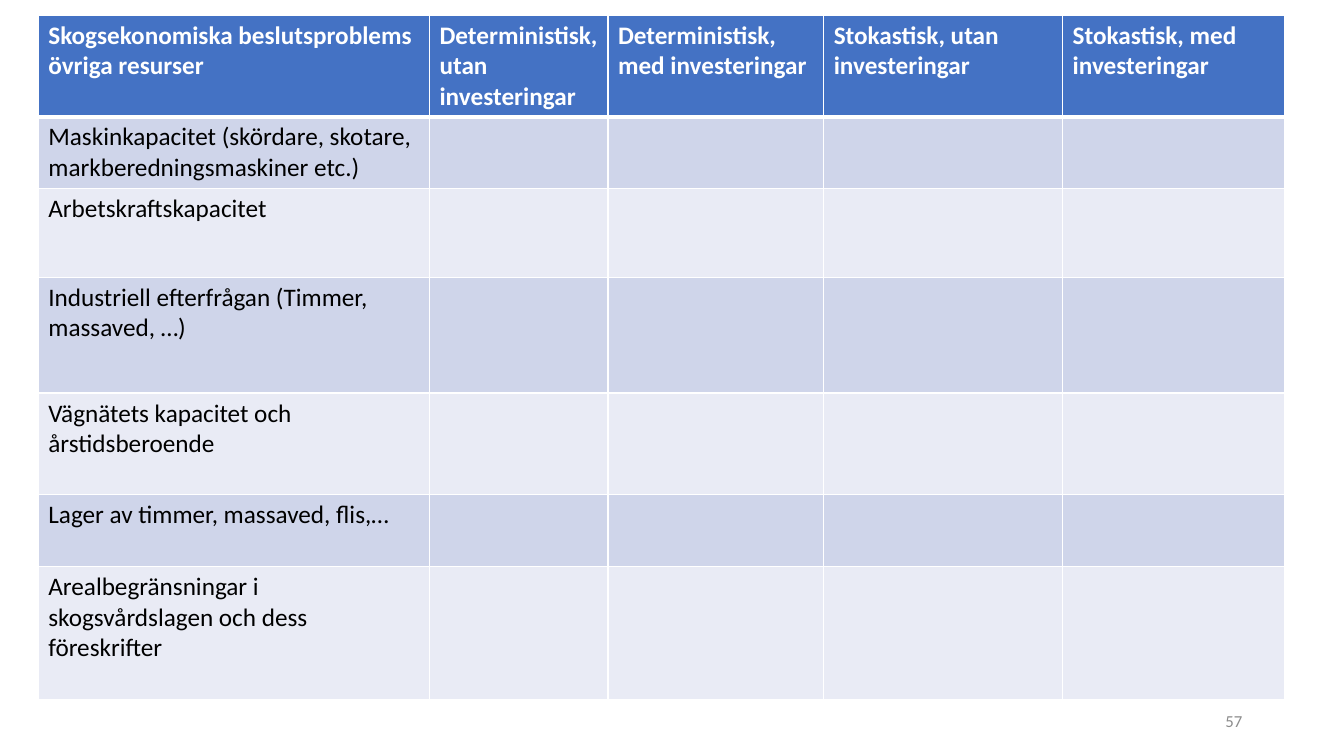
from lxml import etree
from pptx import Presentation
from pptx.dml.color import RGBColor
from pptx.enum.text import MSO_ANCHOR, PP_ALIGN
from pptx.oxml.ns import qn
from pptx.util import Pt

PX = 9144
SLIDE_WIDTH, SLIDE_HEIGHT = 1333, 750
BLANK_LAYOUT = 6
FONT = "Calibri"
MIDDLE = MSO_ANCHOR.MIDDLE
RIGHT = PP_ALIGN.RIGHT

WHITE = RGBColor(0xFF, 0xFF, 0xFF)
BLACK = RGBColor(0x00, 0x00, 0x00)
GREY = RGBColor(0x8C, 0x8C, 0x8C)
HEADER_BLUE = RGBColor(0x44, 0x72, 0xC4)
BANDS = (RGBColor(0xE9, 0xEB, 0xF5), RGBColor(0xCF, 0xD5, 0xEA))

HEADINGS = (
    "Skogsekonomiska beslutsproblems övriga resurser",
    "Deterministisk, utan investeringar",
    "Deterministisk, med investeringar",
    "Stokastisk, utan investeringar",
    "Stokastisk, med investeringar",
)
RESOURCES = (
    "Maskinkapacitet (skördare, skotare, markberedningsmaskiner etc.)",
    "Arbetskraftskapacitet",
    "Industriell efterfrågan (Timmer, massaved, …)",
    "Vägnätets kapacitet och årstidsberoende",
    "Lager av timmer, massaved, flis,…",
    "Arealbegränsningar i skogsvårdslagen och dess föreskrifter",
)
COLUMN_WIDTHS = (388, 177, 214, 237, 220)
ROW_HEIGHTS = (101, 71, 88, 115, 101, 71, 132)


def px(*lengths):
    """Convert pixel lengths to EMU."""
    return [length * PX for length in lengths]


def write(frame, text, size, color, bold=False):
    """Set the text of a frame and format its run."""
    frame.text = text
    for span in frame.paragraphs[0].runs:
        span.font.name = FONT
        span.font.size = Pt(size)
        span.font.bold = bold
        span.font.color.rgb = color


def set_borders(cell, bottom_width):
    """Draw white lines around a cell, ahead of its fill."""
    properties = cell._tc.get_or_add_tcPr()
    widths = {"a:lnL": 1, "a:lnR": 1, "a:lnT": 1, "a:lnB": bottom_width}
    for index, (tag, width) in enumerate(widths.items()):
        line = etree.Element(qn(tag), w=str(Pt(width)))
        fill = etree.SubElement(line, qn("a:solidFill"))
        etree.SubElement(fill, qn("a:srgbClr"), val=str(WHITE))
        properties.insert(index, line)


def add_resource_table(page, left, top):
    """Place the table of resources against types of decision problem."""
    box = px(left, top, sum(COLUMN_WIDTHS), sum(ROW_HEIGHTS))
    table = page.shapes.add_table(len(ROW_HEIGHTS), len(COLUMN_WIDTHS), *box).table
    for column, width in zip(table.columns, px(*COLUMN_WIDTHS)):
        column.width = width
    for row, height in zip(table.rows, px(*ROW_HEIGHTS)):
        row.height = height
    for row_index, row in enumerate(table.rows):
        is_header = row_index == 0
        for cell in row.cells:
            cell.fill.solid()
            cell.fill.fore_color.rgb = HEADER_BLUE if is_header else BANDS[row_index % 2]
            set_borders(cell, 3 if is_header else 1)
    for index, heading in enumerate(HEADINGS):
        write(table.cell(0, index).text_frame, heading, 18, WHITE, True)
    for index, resource in enumerate(RESOURCES, 1):
        write(table.cell(index, 0).text_frame, resource, 18, BLACK)


def add_page_number(page, left, top, width, height):
    """Place the page number, right-aligned in its box."""
    frame = page.shapes.add_textbox(*px(left, top, width, height)).text_frame
    frame.word_wrap = True
    frame.vertical_anchor = MIDDLE
    write(frame, "57", 12, GREY)
    frame.paragraphs[0].alignment = RIGHT


def main():
    """Build and save the slide."""
    deck = Presentation()
    deck.slide_width, deck.slide_height = px(SLIDE_WIDTH, SLIDE_HEIGHT)
    page = deck.slides.add_slide(deck.slide_layouts[BLANK_LAYOUT])
    add_page_number(page, 942, 695, 300, 40)
    add_resource_table(page, 38, 15)
    deck.save("out.pptx")


if __name__ == "__main__":
    main()
